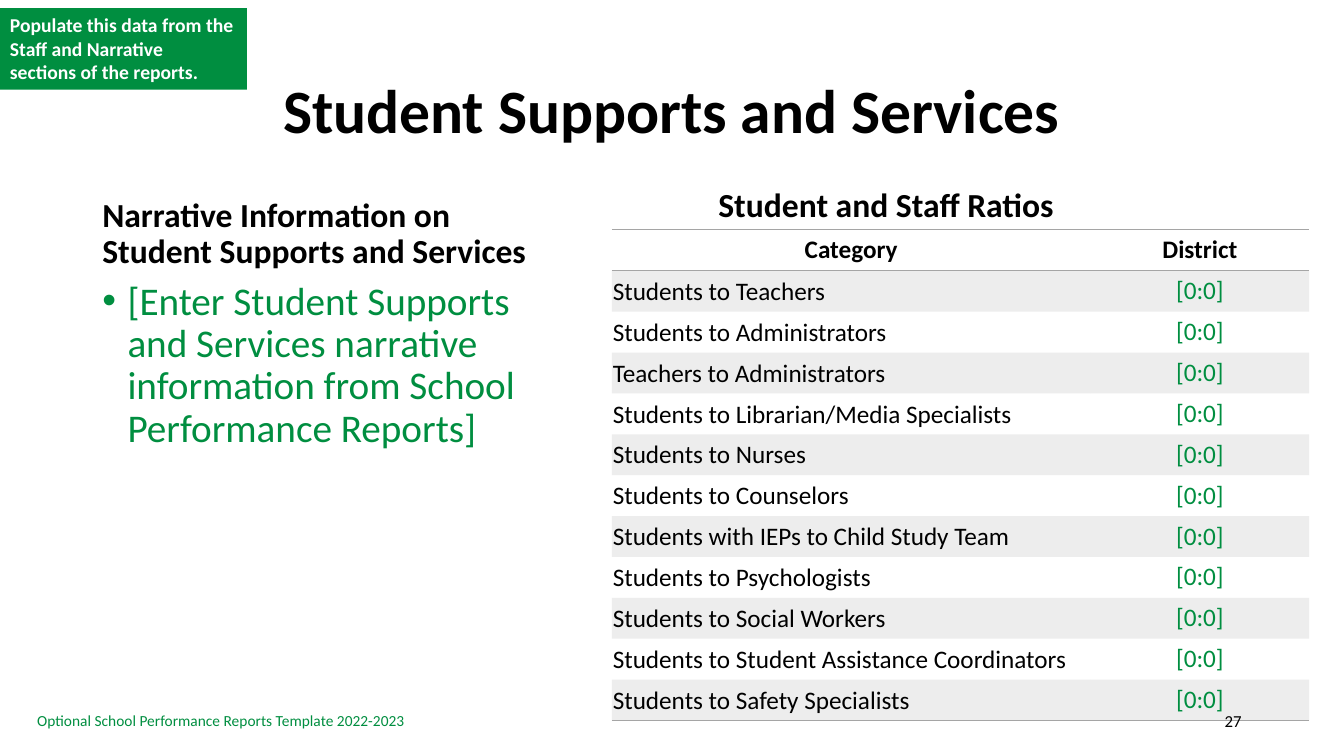
import pptx
import pptx.dml.color
import pptx.enum.shapes
import pptx.enum.text
import pptx.oxml
import pptx.oxml.ns
import pptx.util
from dataclasses import dataclass
from lxml import etree

Pt = pptx.util.Pt
RGB = pptx.dml.color.RGBColor.from_string
ALIGN = pptx.enum.text.PP_ALIGN
ANCHOR = pptx.enum.text.MSO_ANCHOR
qn = pptx.oxml.ns.qn


@dataclass(frozen=True)
class Theme:
    font: str = "Calibri"
    black: str = "000000"
    white: str = "FFFFFF"
    green: str = "008E40"
    gray: str = "A5A5A5"
    band_alpha: int = 20
    title: int = 44
    body: int = 28
    heading: int = 24
    table: int = 18
    callout: int = 14
    number: int = 12
    footer: int = 11


THEME = Theme()
NO_STYLE = "{2D5ABB26-0587-4C30-8999-92F81FD0307C}"
RATIO = "[0:0]"
CATEGORIES = [
    "Students to Teachers",
    "Students to Administrators",
    "Teachers to Administrators",
    "Students to Librarian/Media Specialists",
    "Students to Nurses",
    "Students to Counselors",
    "Students with IEPs to Child Study Team",
    "Students to Psychologists",
    "Students to Social Workers",
    "Students to Student Assistance Coordinators",
    "Students to Safety Specialists",
]


def set_all(obj, values):
    for name, value in values.items():
        setattr(obj, name, value)


def write(tf, text, size, color=THEME.black, bold=False, **para):
    """Put one formatted paragraph in a text frame and return it."""
    p = tf.paragraphs[0]
    set_all(p, para)
    r = p.add_run()
    r.text = text
    set_all(r.font, {"name": THEME.font, "size": Pt(size), "bold": bold})
    r.font.color.rgb = RGB(color)
    return p


def add_text(slide, box, text, size, anchor=ANCHOR.TOP, wrap=True, **style):
    sp = slide.shapes.add_textbox(*map(Pt, box))
    set_all(sp.text_frame, {"word_wrap": wrap, "vertical_anchor": anchor})
    return write(sp.text_frame, text, size, **style)


def add_callout(slide, box, text):
    sp = slide.shapes.add_shape(
        pptx.enum.shapes.MSO_SHAPE.RECTANGLE, *map(Pt, box))
    sp.shadow.inherit = False
    sp.fill.solid()
    sp.fill.fore_color.rgb = RGB(THEME.green)
    sp.line.fill.background()
    tf = sp.text_frame
    set_all(tf, {"word_wrap": True, "vertical_anchor": ANCHOR.TOP})
    write(tf, text, THEME.callout, THEME.white, True, alignment=ALIGN.LEFT)


def add_heading(slide, box, text):
    add_text(slide, box, text, THEME.heading, ANCHOR.BOTTOM, bold=True,
             line_spacing=0.9, space_before=Pt(10))


def add_narrative(slide, box, heading, text, heading_height=64.8):
    left, top, width, height = box
    add_heading(slide, (left, top, width, heading_height), heading)
    # The bullet text is a little narrower than its heading
    p = add_text(slide, (left, top + heading_height, width - 16,
                         height - heading_height),
                 text, THEME.body, color=THEME.green,
                 line_spacing=0.9, space_before=Pt(10))
    pPr = p._p.get_or_add_pPr()
    pPr.set("marL", str(Pt(18)))
    pPr.set("indent", str(Pt(-18)))
    etree.SubElement(pPr, qn("a:buFont")).set("typeface", "Arial")
    etree.SubElement(pPr, qn("a:buChar")).set("char", "•")


def add_border(cell, side):
    tcPr = cell._tc.get_or_add_tcPr()
    ln = etree.SubElement(tcPr, qn("a:ln" + side))
    ln.set("w", str(Pt(1)))
    fill = etree.SubElement(ln, qn("a:solidFill"))
    etree.SubElement(fill, qn("a:srgbClr")).set("val", THEME.gray)


def fill_cell(cell, banded):
    if not banded:
        cell.fill.background()
        return
    cell.fill.solid()
    cell.fill.fore_color.rgb = RGB(THEME.gray)
    color = cell._tc.tcPr.find(qn("a:solidFill")).find(qn("a:srgbClr"))
    etree.SubElement(color, qn("a:alpha")).set(
        "val", str(THEME.band_alpha * 1000))


def add_ratios(slide, box, heading, header):
    """Place the heading and the banded ratio table inside the box."""
    left, top, width, height = box
    heading_height, heading_indent = 64.8, 69
    add_heading(slide, (left + heading_indent, top, width - heading_indent,
                        heading_height), heading)
    rows = [header] + [(name, RATIO) for name in CATEGORIES]
    table_height = height - heading_height
    table = slide.shapes.add_table(
        len(rows), 2, Pt(left), Pt(top + heading_height),
        Pt(width), Pt(table_height)).table
    table._tbl.tblPr.find(qn("a:tableStyleId")).text = NO_STYLE
    category_width = 342
    table.columns[0].width = Pt(category_width)
    table.columns[1].width = Pt(width - category_width)
    for i, row in enumerate(rows):
        table.rows[i].height = Pt(table_height / len(rows))
        for j, text in enumerate(row):
            cell = table.cell(i, j)
            is_header, is_name = i == 0, i > 0 and j == 0
            if is_name:
                set_all(cell, {"vertical_anchor": ANCHOR.MIDDLE,
                               "margin_left": Pt(0.75),
                               "margin_right": Pt(0.75),
                               "margin_top": Pt(0.75),
                               "margin_bottom": 0})
            if is_header:
                add_border(cell, "T")
            if is_header or i == len(rows) - 1:
                add_border(cell, "B")
            fill_cell(cell, i % 2 == 1)
            write(cell.text_frame, text, THEME.table,
                  THEME.black if is_header or is_name else THEME.green,
                  is_header,
                  alignment=ALIGN.LEFT if is_name else ALIGN.CENTER)


def add_footer(slide, box, text, number):
    left, top, width, height = box
    add_text(slide, (left, top + 4.3, 281, 21), text, THEME.footer,
             wrap=False, color=THEME.green)
    add_text(slide, (left + width - 216, top, 216, height), number,
             THEME.number, ANCHOR.MIDDLE, alignment=ALIGN.RIGHT)


def build_supports_slide(prs):
    slide = prs.slides.add_slide(prs.slide_layouts[6])
    add_text(slide, (66, 28.8, 828, 104.4), "Student Supports and Services",
             THEME.title, ANCHOR.MIDDLE, bold=True,
             alignment=ALIGN.CENTER, line_spacing=0.9)
    add_callout(slide, (0, 5.8, 176.4, 58.3),
                "Populate this data\u00a0from the Staff and Narrative "
                "sections\u00a0of the reports.")
    add_narrative(slide, (66, 132.5, 330.5, 355),
                  "Narrative Information on Student Supports and Services",
                  "[Enter Student Supports and Services narrative "
                  "information from School Performance Reports]")
    add_ratios(slide, (437, 99.4, 498.2, 415.4),
               "Student and Staff Ratios", ("Category", "District"))
    add_footer(slide, (19.4, 500.4, 874.6, 28.8),
               "Optional School Performance Reports Template 2022-2023", "27")


def main():
    prs = pptx.Presentation()
    set_all(prs, {"slide_width": Pt(960), "slide_height": Pt(540)})
    build_supports_slide(prs)
    prs.save("out.pptx")


if __name__ == "__main__":
    main()
